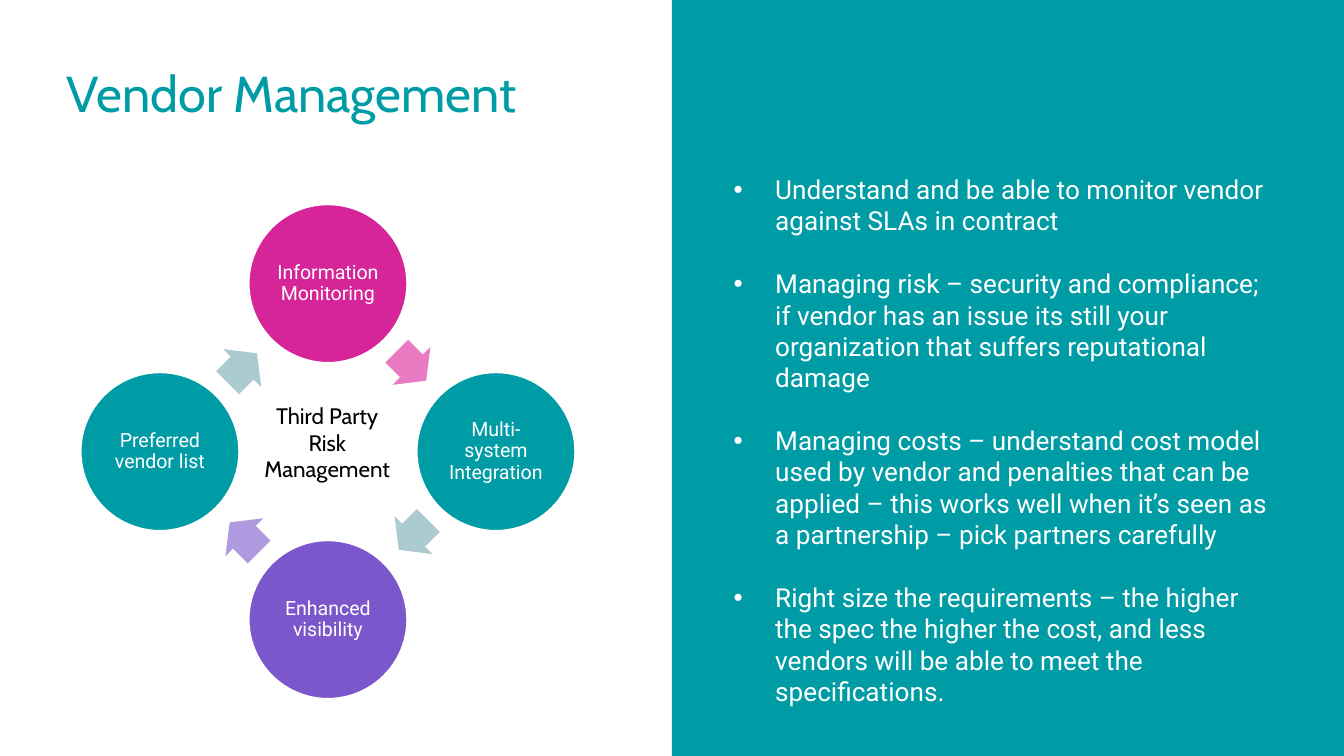
"""Build the Vendor Management slide with a risk cycle and a bullet panel."""
from math import cos, radians, sin

from lxml.etree import SubElement
from pptx import Presentation
from pptx.dml.color import RGBColor
from pptx.enum.shapes import MSO_SHAPE
from pptx.enum.text import MSO_ANCHOR, PP_ALIGN
from pptx.oxml.ns import qn
from pptx.util import Inches, Pt

TEAL = RGBColor(0x00, 0x9C, 0xA6)
PINK = RGBColor(0xD6, 0x25, 0x98)
PURPLE = RGBColor(0x7B, 0x57, 0xCB)
LIGHT_PINK = RGBColor(0xE8, 0x7B, 0xC2)
LIGHT_TEAL = RGBColor(0xAB, 0xCB, 0xD0)
LIGHT_PURPLE = RGBColor(0xB0, 0x9A, 0xE0)
WHITE = RGBColor(0xFF, 0xFF, 0xFF)
BLACK = RGBColor(0x00, 0x00, 0x00)

TITLE = "Vendor Management"
CYCLE_LABEL = "Third Party Risk Management"
STAGES = [
    ("Information Monitoring", PINK, LIGHT_PINK),
    ("Multi-system Integration", TEAL, LIGHT_TEAL),
    ("Enhanced visibility", PURPLE, LIGHT_PURPLE),
    ("Preferred vendor list", TEAL, LIGHT_TEAL),
]
BULLETS = [
    "Understand and be able to monitor vendor against SLAs in contract",
    "Managing risk – security and compliance; if vendor has an issue its still your "
    "organization that suffers reputational damage",
    "Managing costs – understand cost model used by vendor and penalties that can be "
    "applied – this works well when it’s seen as a partnership – pick partners carefully",
    "Right size the requirements – the higher the spec the higher the cost, and less "
    "vendors will be able to meet the specifications.",
]

TITLE_FORMAT = {"name": "Cabin", "size": Pt(27), "color": TEAL}
LABEL_FORMAT = {"name": "Cabin", "size": Pt(12), "color": BLACK}
STAGE_FORMAT = {"name": "Roboto", "size": Pt(10.5), "color": WHITE}
BULLET_FORMAT = {"name": "Roboto", "size": Pt(14), "color": WHITE}

SLIDE_WIDTH = 10
SLIDE_HEIGHT = SLIDE_WIDTH * 9 / 16
CENTER_X, CENTER_Y = 2.44, 3.36
RING_RADIUS, ARROW_RADIUS = 1.25, 0.89
CIRCLE_SIZE = 1.18
ARROW_WIDTH, ARROW_HEIGHT = 0.31, 0.4
FIRST_ARROW_ANGLE = -45.7


def format_font(font, values):
    for name, value in values.items():
        if name == "color":
            font.color.rgb = value
        else:
            setattr(font, name, value)


def add_shape(slide, kind, left, top, width, height, fill):
    shape = slide.shapes.add_shape(
        kind, Inches(left), Inches(top), Inches(width), Inches(height))
    shape.shadow.inherit = False
    shape.fill.solid()
    shape.fill.fore_color.rgb = fill
    shape.line.fill.background()
    return shape


def add_on_ring(slide, kind, radius, angle, width, height, fill):
    left = CENTER_X + radius * cos(radians(angle)) - width / 2
    top = CENTER_Y + radius * sin(radians(angle)) - height / 2
    return add_shape(slide, kind, left, top, width, height, fill)


def add_text_box(slide, left, top, width, height):
    box = slide.shapes.add_textbox(
        Inches(left), Inches(top), Inches(width), Inches(height))
    box.text_frame.word_wrap = True
    return box.text_frame


def write_line(frame, text, values, alignment=PP_ALIGN.LEFT):
    paragraph = frame.paragraphs[0]
    paragraph.text = text
    paragraph.alignment = alignment
    format_font(paragraph.runs[0].font, values)
    return paragraph


def add_cycle(slide):
    for index, (text, fill, arrow_fill) in enumerate(STAGES):
        circle = add_on_ring(slide, MSO_SHAPE.OVAL, RING_RADIUS, 90 * index - 90,
                             CIRCLE_SIZE, CIRCLE_SIZE, fill)
        circle.line.color.rgb = WHITE
        circle.line.width = Pt(1)
        frame = circle.text_frame
        frame.word_wrap = True
        frame.vertical_anchor = MSO_ANCHOR.MIDDLE
        for side in ("left", "top", "right", "bottom"):
            setattr(frame, f"margin_{side}", Inches(0.02))
        write_line(frame, text, STAGE_FORMAT, PP_ALIGN.CENTER).line_spacing = 0.9

        arrow = add_on_ring(slide, MSO_SHAPE.RIGHT_ARROW, ARROW_RADIUS,
                            FIRST_ARROW_ANGLE + 90 * index,
                            ARROW_WIDTH, ARROW_HEIGHT, arrow_fill)
        arrow.rotation = 45 + 90 * index
        arrow.adjustments[0] = 0.6
        arrow.adjustments[1] = 0.5
    label = add_text_box(slide, 1.8, 2.94, 1.27, 0.71)
    write_line(label, CYCLE_LABEL, LABEL_FORMAT, PP_ALIGN.CENTER)


def add_bullets(slide):
    frame = add_text_box(slide, 5.36, 1.22, 4.24, 4.11)
    frame.vertical_anchor = MSO_ANCHOR.MIDDLE
    for index, text in enumerate(BULLETS):
        paragraph = frame.add_paragraph() if index else frame.paragraphs[0]
        paragraph.text = text
        if index:
            paragraph.space_before = Pt(16.8)
        properties = paragraph._p.get_or_add_pPr()
        properties.set("marL", str(Inches(0.31)))
        properties.set("indent", str(Inches(-0.31)))
        SubElement(properties, qn("a:buFont"), typeface="Arial")
        SubElement(properties, qn("a:buChar"), char="•")
        format_font(paragraph.runs[0].font, BULLET_FORMAT)


def main():
    presentation = Presentation()
    presentation.slide_width = Inches(SLIDE_WIDTH)
    presentation.slide_height = Inches(SLIDE_HEIGHT)
    slide = presentation.slides.add_slide(presentation.slide_layouts[6])
    add_shape(slide, MSO_SHAPE.RECTANGLE, SLIDE_WIDTH / 2, 0,
              SLIDE_WIDTH / 2, SLIDE_HEIGHT, TEAL)
    write_line(add_text_box(slide, 0.4, 0.41, 4.6, 0.74), TITLE, TITLE_FORMAT)
    add_bullets(slide)
    add_cycle(slide)
    presentation.save("out.pptx")


if __name__ == "__main__":
    main()
